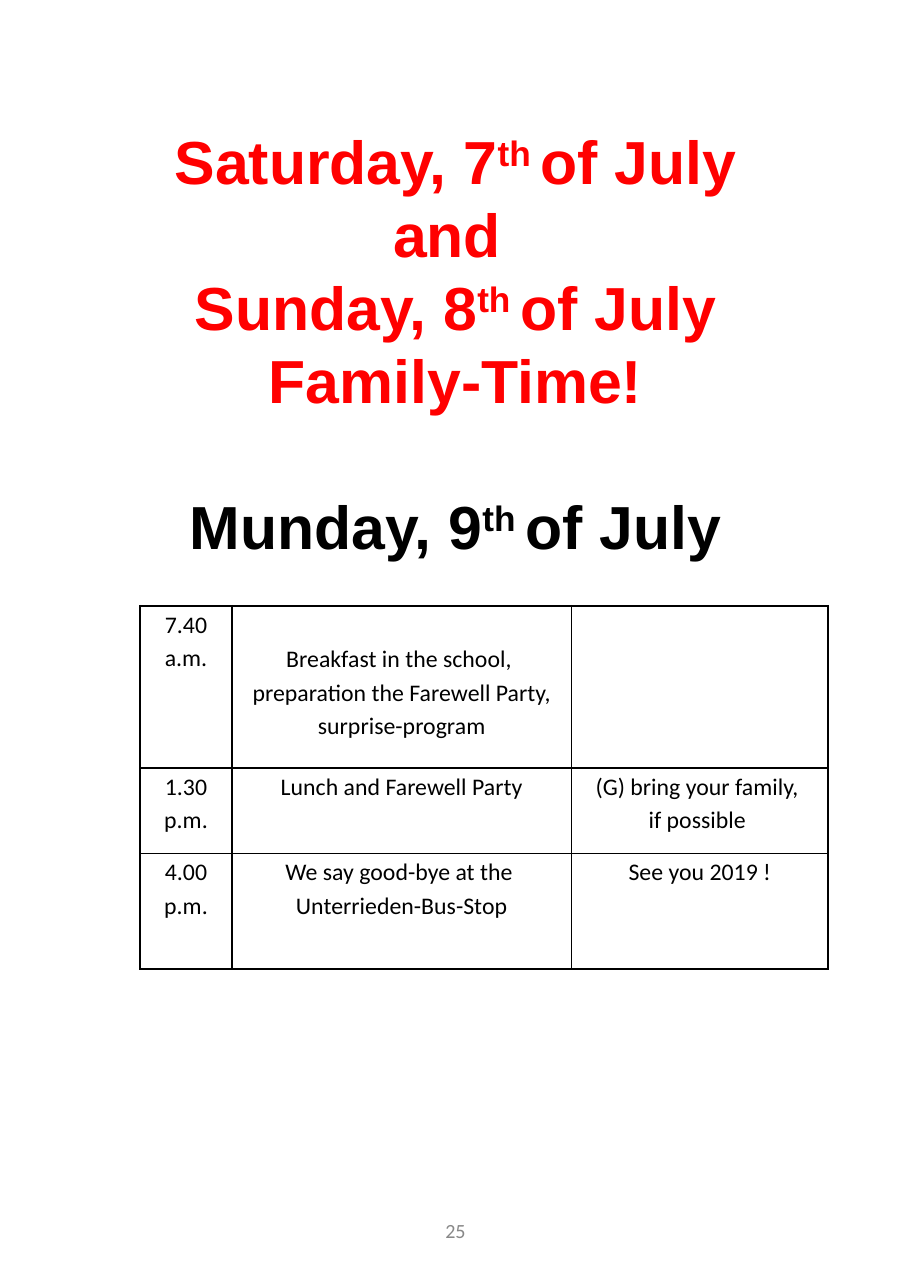
import pptx
import pptx.util
import pptx.dml.color
import pptx.enum.text
import pptx.oxml
import pptx.oxml.ns
import lxml.etree

Inches = pptx.util.Inches
Pt = pptx.util.Pt
RGBColor = pptx.dml.color.RGBColor
CENTER = pptx.enum.text.PP_ALIGN.CENTER
MIDDLE = pptx.enum.text.MSO_ANCHOR.MIDDLE

WIDTH, HEIGHT = 5.85, 8.27
RED = RGBColor(0xFF, 0x00, 0x00)
BLACK = RGBColor(0x00, 0x00, 0x00)
GRAY = RGBColor(0x88, 0x88, 0x88)

HEADING_SIZE = 28.1
HEADING_LEADING = 33.75
HEADING = [
    (["Saturday, 7", "th ", "of July"], RED, 0),
    (["and "], RED, 0),
    (["Sunday, 8", "th ", "of July"], RED, 0),
    (["Family-Time!"], RED, 0),
    (["Munday, 9", "th ", "of July"], BLACK, HEADING_LEADING),
]

COLUMNS = [0.59, 2.18, 1.65]
ROWS = [1.04, 0.55, 0.74]
TEXT_LINE = 0.22
PROGRAM = [
    [["7.40", "a.m."],
     ["Breakfast in the school, ", "preparation the Farewell Party,", "surprise-program"],
     []],
    [["1.30", "p.m."],
     ["Lunch and Farewell Party"],
     ["(G) bring your family, ", "if possible "]],
    [["4.00", "p.m."],
     ["We say good-bye at the ", "Unterrieden-Bus-Stop"],
     ["See you 2019 !"]],
]


def add_span(para, text, font, size, color, bold=False):
    span = para.add_run()
    span.text = text
    span.font.name = font
    span.font.size = Pt(size)
    span.font.bold = bold
    span.font.color.rgb = color
    return span


def add_centred_paragraphs(frame, count):
    paras = [frame.paragraphs[0]]
    paras += [frame.add_paragraph() for _ in range(count - 1)]
    for para in paras:
        para.alignment = CENTER
    return paras


def add_frame(page, box):
    frame = page.shapes.add_textbox(*map(Inches, box)).text_frame
    frame.word_wrap = True
    frame.vertical_anchor = MIDDLE
    return frame


def add_heading(page, box):
    frame = add_frame(page, box)
    paras = add_centred_paragraphs(frame, len(HEADING))
    for para, (parts, color, gap) in zip(paras, HEADING):
        para.line_spacing = Pt(HEADING_LEADING)
        para.space_before = Pt(gap)
        for part in parts:
            span = add_span(para, part, "Arial", HEADING_SIZE, color, True)
            if part == "th ":
                span.font._element.set("baseline", "30000")


def add_borders(cell):
    properties = cell._tc.get_or_add_tcPr()
    for position, side in enumerate(("lnL", "lnR", "lnT", "lnB")):
        line = pptx.oxml.parse_xml(
            f'<a:{side} {pptx.oxml.ns.nsdecls("a")} w="12700">'
            f'<a:solidFill><a:srgbClr val="{BLACK}"/></a:solidFill></a:{side}>')
        properties.insert(position, line)


def add_program(page, box):
    table = page.shapes.add_table(len(ROWS), len(COLUMNS), *map(Inches, box)).table
    table.first_row = table.horz_banding = False
    for column, width in zip(table.columns, COLUMNS):
        column.width = Inches(width)
    for row, height in zip(table.rows, ROWS):
        row.height = Inches(height)
    for cell, lines in zip(table.iter_cells(), sum(PROGRAM, [])):
        cell.fill.background()
        cell.margin_left = cell.margin_right = Inches(0.06)
        cell.margin_top = Inches(TEXT_LINE if len(lines) == 3 else 0)
        cell.margin_bottom = 0
        add_borders(cell)
        paras = add_centred_paragraphs(cell.text_frame, len(lines))
        for para, line in zip(paras, lines):
            para.line_spacing = 1.15
            add_span(para, line, "Calibri", 11, BLACK)


def add_page_number(page, box):
    para = add_centred_paragraphs(add_frame(page, box), 1)[0]
    add_span(para, "25", "Calibri", 9.3, GRAY)


def main():
    deck = pptx.Presentation()
    deck.slide_width, deck.slide_height = Inches(WIDTH), Inches(HEIGHT)
    page = deck.slides.add_slide(deck.slide_layouts[6])
    add_heading(page, (WIDTH * 0.05, 1.55, WIDTH * 0.9, 1.3))
    add_program(page, (0.9, 3.89, sum(COLUMNS), sum(ROWS)))
    add_page_number(page, ((WIDTH - 1.36) / 2, 7.68, 1.36, 0.44))
    deck.save("out.pptx")


if __name__ == "__main__":
    main()
